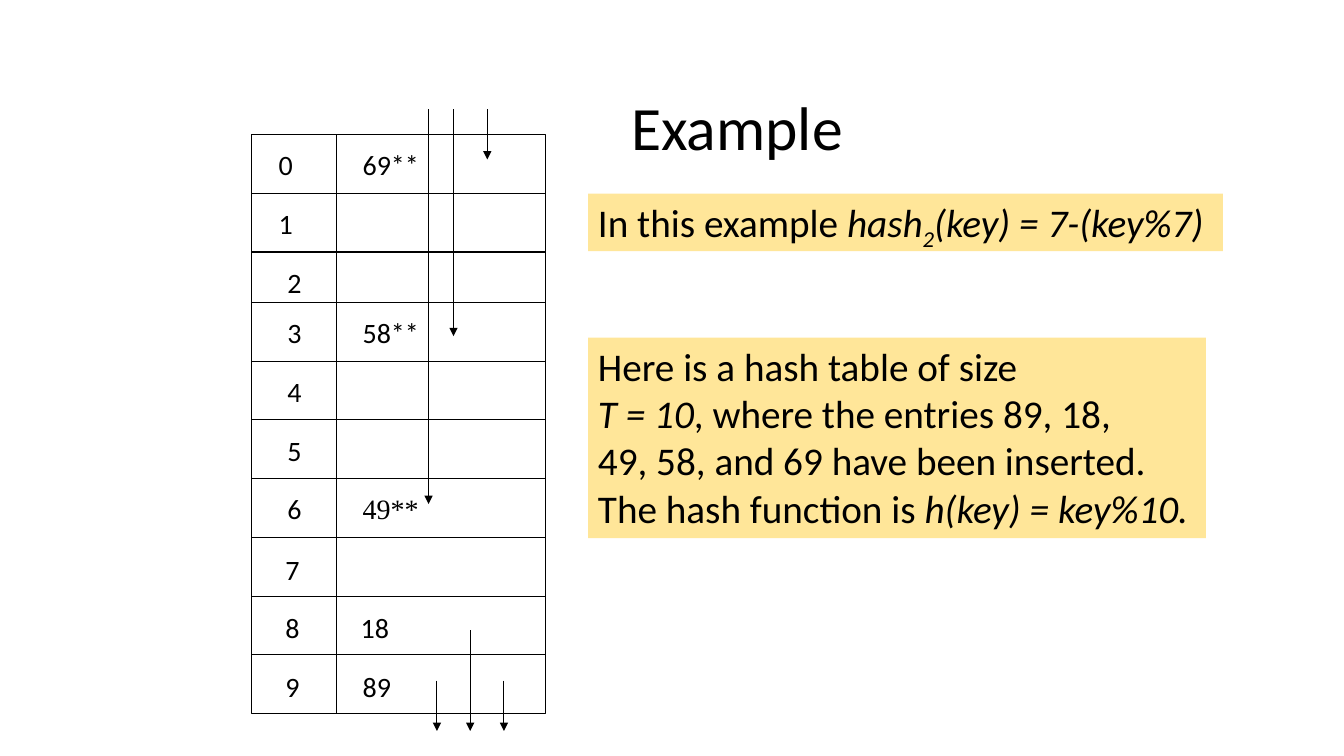
import pptx
import pptx.dml.color
import pptx.enum.shapes
import pptx.enum.text
import pptx.util
from pptx.util import Cm

BLACK, YELLOW = "000000", "FFE699"

# Hash table: slot, slot left, entry, entry left, entry font, text drop, row height
ROWS = [
    ("0", 6.77, "69**", 8.89, "Calibri", 0.21, 1.48),
    ("1", 6.77, "", 8.89, "Calibri", 0.21, 1.48),
    ("2", 6.99, "", 8.89, "Calibri", 0.21, 1.27),
    ("3", 6.99, "58**", 8.89, "Calibri", 0.21, 1.48),
    ("4", 6.99, "", 8.89, "Calibri", 0.21, 1.48),
    ("5", 6.99, "", 8.89, "Calibri", 0.21, 1.48),
    ("6", 6.99, "49**", 8.89, "Times New Roman", 0.21, 1.48),
    ("7", 6.94, "", 8.89, "Calibri", 0.25, 1.48),
    ("8", 6.94, "18", 8.84, "Calibri", 0.25, 1.48),
    ("9", 6.94, "89", 8.89, "Calibri", 0.25, 1.48),
]
TABLE_LEFT, TABLE_TOP, TABLE_WIDTH, DIVIDER = 6.35, 3.39, 7.41, 8.47
TEXT_WIDTHS = {1: 0.86, 2: 1.24, 4: 1.95}
TEXT_HEIGHT = 1.12

# Probe arrows: x, start y, end y
ARROWS = [
    (10.8, 2.75, 12.7), (11.43, 2.75, 8.47), (12.28, 2.75, 4.02),
    (11.01, 17.15, 18.42), (11.85, 15.88, 18.42), (12.7, 17.15, 18.42),
]

# Notes: place, then paragraphs of (text, style) spans
NOTES = [
    ((14.82, 8.51, 15.57, 5.05), [
        [("Here is a hash table of size", "")],
        [("T = 10", "italic"), (", where the entries 89, 18,", "")],
        [("49, 58, and 69 have been inserted. ", "")],
        [("The hash function is ", ""), ("h(key) = key%10.", "italic")],
    ]),
    ((14.82, 4.88, 16, 1.45), [
        [("In this example ", ""), ("hash", "italic"), ("2", "italic subscript"),
         ("(key) = 7-(key%7)", "italic")],
    ]),
]


def color(hex_text):
    """Turn a hex string into a colour."""
    return pptx.dml.color.RGBColor.from_string(hex_text)


def write(shape, paragraphs, size, font="Calibri", wrap=False, anchor="TOP", spacing=None):
    """Fill a shape with paragraphs of (text, style) spans."""
    frame = shape.text_frame
    frame.word_wrap = wrap
    frame.vertical_anchor = getattr(pptx.enum.text.MSO_ANCHOR, anchor)
    for index, spans in enumerate(paragraphs):
        para = frame.add_paragraph() if index else frame.paragraphs[0]
        para.alignment = pptx.enum.text.PP_ALIGN.LEFT
        para.line_spacing = spacing
        for text, style in spans:
            span = para.add_run()
            span.text = text
            span.font.name = font
            span.font.size = pptx.util.Pt(size)
            span.font.color.rgb = color(BLACK)
            span.font.italic = "italic" in style
            if "subscript" in style:
                span.font._element.set("baseline", "-25000")


def add_text(page, text, place, size=20, **text_format):
    """Add a text box with one line of text."""
    box = page.shapes.add_textbox(*map(Cm, place))
    write(box, [[(text, "")]], size, **text_format)


def add_box(page, place, fill=None, line=None):
    """Add a plain rectangle with an optional fill and outline."""
    box = page.shapes.add_shape(pptx.enum.shapes.MSO_SHAPE.RECTANGLE, *map(Cm, place))
    box.shadow.inherit = False
    for part, value in ((box.fill, fill), (box.line.fill, line)):
        if value:
            part.solid()
            part.fore_color.rgb = color(value)
        else:
            part.background()
    if line:
        box.line.width = pptx.util.Pt(0.75)
    return box


def add_line(page, start, end, arrow=False):
    """Add a thin black line, with an arrowhead at its end if wanted."""
    straight = pptx.enum.shapes.MSO_CONNECTOR.STRAIGHT
    line = page.shapes.add_connector(straight, *map(Cm, start + end))
    line.line.color.rgb = color(BLACK)
    line.line.width = pptx.util.Pt(0.75)
    properties = line._element.spPr
    properties.append(pptx.oxml.xmlchemy.OxmlElement("a:effectLst"))
    if arrow:
        head = pptx.oxml.xmlchemy.OxmlElement("a:tailEnd")
        head.set("type", "triangle")
        line.line._get_or_add_ln().append(head)


def add_hash_table(page):
    """Draw the ruled hash table with its slots and entries."""
    height = sum(row[-1] for row in ROWS)
    add_box(page, (TABLE_LEFT, TABLE_TOP, TABLE_WIDTH, height), line=BLACK)
    add_line(page, (DIVIDER, TABLE_TOP), (DIVIDER, TABLE_TOP + height))
    top = TABLE_TOP
    for slot, slot_left, entry, entry_left, font, drop, row_height in ROWS:
        if top > TABLE_TOP:
            add_line(page, (TABLE_LEFT, top), (TABLE_LEFT + TABLE_WIDTH, top))
        for text, left, face in ((slot, slot_left, "Calibri"), (entry, entry_left, font)):
            if text:
                place = (left, top + drop, TEXT_WIDTHS[len(text)], TEXT_HEIGHT)
                add_text(page, text, place, font=face)
        top += row_height


deck = pptx.Presentation()
deck.slide_width, deck.slide_height = Cm(33.87), Cm(19.05)
page = deck.slides.add_slide(deck.slide_layouts[6])

add_text(page, "Example", (15.66, 1.69, 9.53, 3.18), size=44,
         wrap=True, anchor="MIDDLE", spacing=0.9)
add_hash_table(page)
for x, start_y, end_y in ARROWS:
    add_line(page, (x, start_y), (x, end_y), arrow=True)
for place, paragraphs in NOTES:
    write(add_box(page, place, fill=YELLOW), paragraphs, 28)

deck.save("out.pptx")
